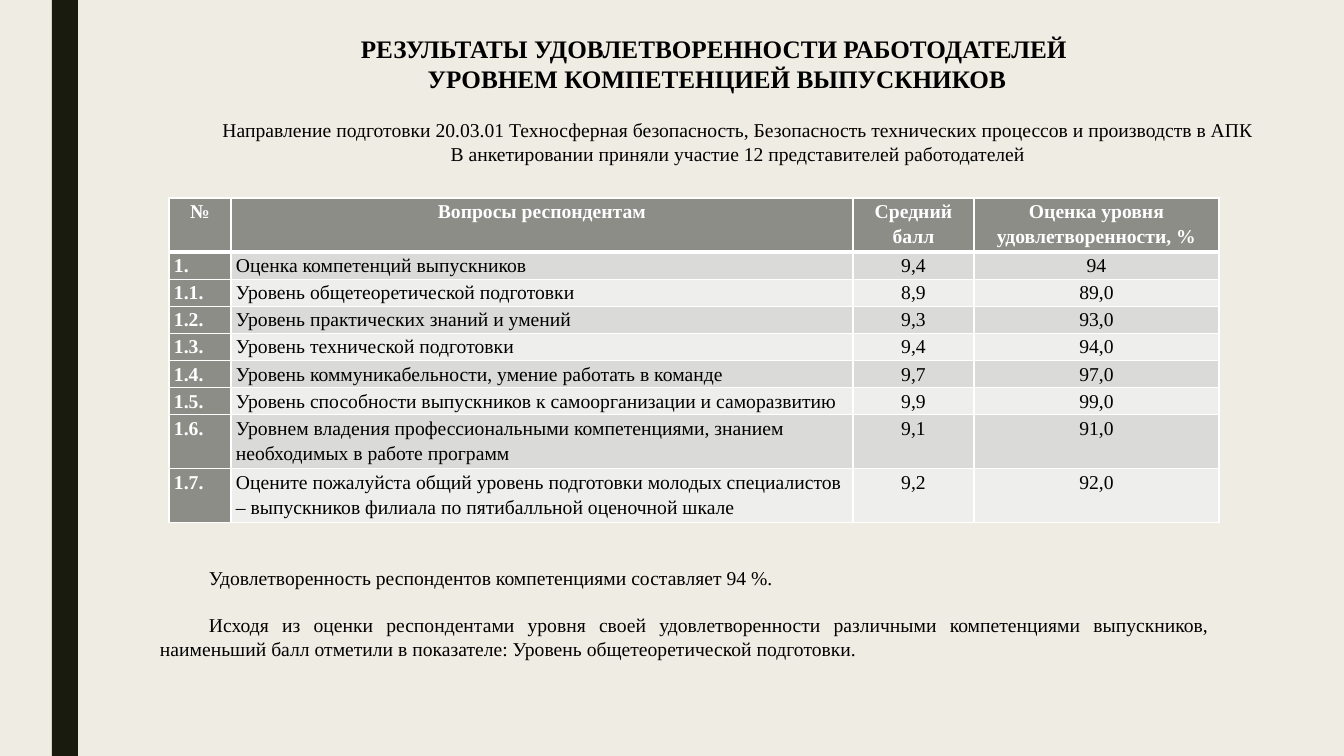
"""Build the slide on employers' satisfaction with graduates' competences."""
import pptx
import pptx.dml.color
import pptx.enum.shapes
import pptx.enum.text
import pptx.oxml
import pptx.oxml.ns
import pptx.util

PX = 914400 / 100.8
ALIGN = pptx.enum.text.PP_ALIGN
ANCHOR = pptx.enum.text.MSO_ANCHOR
FONT = "Times New Roman"
INK, WHITE, HEADER = "000000", "FFFFFF", "8C8D86"
BANDS = ("DADBD9", "EEEEED")

HEADINGS = ("№", "Вопросы респондентам", "Средний балл", "Оценка уровня удовлетворенности, %")
RATINGS = [
    ("1.", "Оценка компетенций выпускников", "9,4", "94"),
    ("1.1.", "Уровень общетеоретической подготовки", "8,9", "89,0"),
    ("1.2.", "Уровень практических знаний и умений", "9,3", "93,0"),
    ("1.3.", "Уровень технической подготовки", "9,4", "94,0"),
    ("1.4.", "Уровень коммуникабельности, умение работать в команде", "9,7", "97,0"),
    ("1.5.", "Уровень способности выпускников к самоорганизации и саморазвитию", "9,9", "99,0"),
    ("1.6.", "Уровнем владения профессиональными компетенциями, знанием необходимых в работе программ",
     "9,1", "91,0"),
    ("1.7.", "Оцените пожалуйста общий уровень подготовки молодых специалистов "
     "– выпускников филиала по пятибалльной оценочной шкале", "9,2", "92,0"),
]
COLUMN_WIDTHS = (62, 622, 121, 245)
LINE_HEIGHT = 27
LINES_PER_ROW = (2, 1, 1, 1, 1, 1, 1, 2, 2)


def px(length):
    """Turn pixels into EMU."""
    return pptx.util.Emu(round(length * PX))


def rgb(code):
    """Turn a hex string into a colour."""
    return pptx.dml.color.RGBColor.from_string(code)


def apply(target, values):
    """Set every attribute in values on the target."""
    for name, value in values.items():
        setattr(target, name, value)


def paint(fill, code):
    """Give a fill one solid colour."""
    fill.solid()
    fill.fore_color.rgb = rgb(code)


def write(paragraph, text, size, color=INK, bold=False, **layout):
    """Write one formatted run into a paragraph."""
    run = paragraph.add_run()
    run.text = text
    apply(run.font, {"name": FONT, "size": pptx.util.Pt(size), "bold": bold})
    run.font.color.rgb = rgb(color)
    apply(paragraph, layout)


def indent_first_line(paragraph, indent):
    """Indent the first line of a paragraph."""
    properties = paragraph._p.get_or_add_pPr()
    for name, length in {"marL": 0, "indent": indent}.items():
        properties.set(name, str(int(px(length))))


def add_text(slide, box, lines, size, bold=False, indent=0, anchor=ANCHOR.TOP, **layout):
    """Add a wrapped text box with one paragraph per line."""
    frame = slide.shapes.add_textbox(*map(px, box)).text_frame
    apply(frame, {"word_wrap": True, "vertical_anchor": anchor})
    for number, line in enumerate(lines):
        paragraph = frame.add_paragraph() if number else frame.paragraphs[0]
        write(paragraph, line, size, bold=bold, **layout)
        indent_first_line(paragraph, indent)
    return frame


def add_side_bar(slide):
    """Draw the dark vertical bar at the left."""
    bar = slide.shapes.add_shape(
        pptx.enum.shapes.MSO_SHAPE.RECTANGLE, *map(px, (52, 0, 26, 756)))
    bar.shadow.inherit = False
    paint(bar.fill, "191B0E")
    bar.line.fill.background()


def set_borders(cell, widths):
    """Draw white cell borders with widths in points by side."""
    properties = cell._tc.get_or_add_tcPr()
    for side, width in widths.items():
        properties.append(pptx.oxml.parse_xml(
            f'<a:ln{side} {pptx.oxml.ns.nsdecls("a")} w="{int(pptx.util.Pt(width))}">'
            f'<a:solidFill><a:srgbClr val="{WHITE}"/></a:solidFill></a:ln{side}>'))


def fill_cell(cell, text, row, column):
    """Write and format one table cell by its place."""
    strong = row == 0 or column == 0
    centred = row == 0 or column >= 2
    apply(cell, {"margin_left": px(5), "margin_right": px(5),
                 "margin_top": 0, "margin_bottom": 0})
    set_borders(cell, {"L": 1, "R": 1, "T": 3 if row == 1 else 1, "B": 1 if row else 3})
    paint(cell.fill, HEADER if strong else BANDS[(row - 1) % 2])
    write(cell.text_frame.paragraphs[0], text, 14, WHITE if strong else INK, strong,
          alignment=ALIGN.CENTER if centred else ALIGN.LEFT, line_spacing=1.15)


def add_ratings(slide):
    """Add the table of questions and ratings."""
    rows = [HEADINGS, *RATINGS]
    size = (sum(COLUMN_WIDTHS), LINE_HEIGHT * sum(LINES_PER_ROW))
    table = slide.shapes.add_table(
        len(rows), len(HEADINGS), *map(px, (169, 198, *size))).table
    apply(table, {"first_row": False, "horz_banding": False})
    for column, width in zip(table.columns, COLUMN_WIDTHS):
        column.width = px(width)
    for row, lines in zip(table.rows, LINES_PER_ROW):
        row.height = px(LINE_HEIGHT * lines)
    for row, texts in enumerate(rows):
        for column, text in enumerate(texts):
            fill_cell(table.cell(row, column), text, row, column)


def main():
    """Build and save the slide."""
    deck = pptx.Presentation()
    apply(deck, {"slide_width": px(1344), "slide_height": px(756)})
    slide = deck.slides.add_slide(deck.slide_layouts[6])
    paint(slide.background.fill, "EFEDE3")
    add_side_bar(slide)
    add_text(slide, (14, 28, 1406, 72),
             ["РЕЗУЛЬТАТЫ УДОВЛЕТВОРЕННОСТИ РАБОТОДАТЕЛЕЙ ", "УРОВНЕМ КОМПЕТЕНЦИЕЙ ВЫПУСКНИКОВ"],
             18, bold=True, alignment=ALIGN.CENTER)
    add_text(slide, (150, 113, 1127, 57),
             ["Направление подготовки 20.03.01 Техносферная безопасность, "
              "Безопасность технических процессов и производств в АПК",
              "В анкетировании приняли участие 12 представителей работодателей"],
             14, indent=49, anchor=ANCHOR.MIDDLE, alignment=ALIGN.CENTER)
    conclusions = add_text(
        slide, (150, 561, 1069, 105),
        ["Удовлетворенность респондентов компетенциями составляет 94 %.",
         "Исходя из оценки респондентами уровня своей удовлетворенности различными "
         "компетенциями выпускников, наименьший балл отметили в показателе: "
         "Уровень общетеоретической подготовки."],
        14, indent=49, alignment=ALIGN.JUSTIFY)
    conclusions.paragraphs[1].space_before = pptx.util.Pt(17)
    add_ratings(slide)
    deck.save("out.pptx")


if __name__ == "__main__":
    main()
